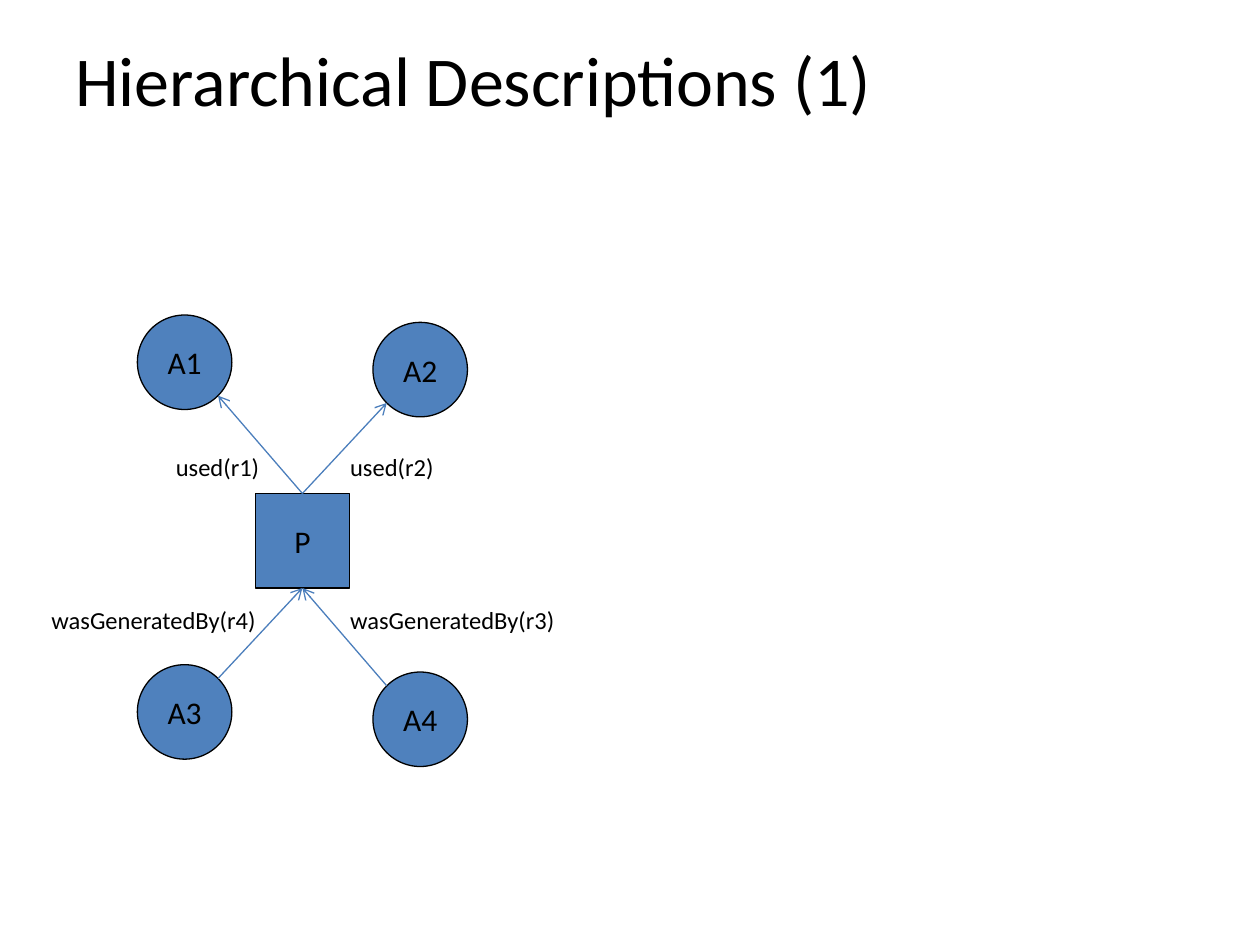
from math import sqrt

from lxml import etree
from pptx import Presentation
from pptx.dml.color import RGBColor
from pptx.enum import shapes, text
from pptx.oxml.ns import qn
from pptx.util import Pt

TITLE = "Hierarchical Descriptions (1)"
FONT = "Calibri"
COLORS = {"node": "4F81BD", "outline": "000000", "text": "000000", "arrow": "4B7EBC"}

NODE_SIZE = 54
PROCESS_CENTER = (172.8, 309)
ARTIFACT_OFFSET = 67.3
# name, side of the process (-1 left, 1 right), top, whether the process uses it
ARTIFACTS = [
    ("A1", -1, 180, True),
    ("A2", 1, 184.2, True),
    ("A3", -1, 379.8, False),
    ("A4", 1, 384, False),
]
# wording, left, top, width
LABELS = [
    ("used(r2)", 193, 254.7, 62.6),
    ("used(r1)", 93.4, 254.7, 62.6),
    ("wasGeneratedBy(r3)", 193, 342.2, 132.5),
    ("wasGeneratedBy(r4)", 22.3, 342.2, 132.5),
]
LABEL_HEIGHT = 24.2


def color(name):
    return RGBColor.from_string(COLORS[name])


def write(shape, wording, size, alignment, anchor, wrap=False):
    frame = shape.text_frame
    frame.word_wrap = wrap
    frame.vertical_anchor = anchor
    paragraph = frame.paragraphs[0]
    paragraph.text = wording
    paragraph.alignment = alignment
    paragraph.font.name = FONT
    paragraph.font.size = Pt(size)
    paragraph.font.color.rgb = color("text")


def add_text(slide, wording, left, top, width, height, size, anchor, wrap=False):
    box = slide.shapes.add_textbox(Pt(left), Pt(top), Pt(width), Pt(height))
    write(box, wording, size, text.PP_ALIGN.LEFT, anchor, wrap)
    return box


def add_node(slide, kind, name, center_x, top):
    node = slide.shapes.add_shape(
        kind, Pt(center_x - NODE_SIZE / 2), Pt(top), Pt(NODE_SIZE), Pt(NODE_SIZE))
    node.shadow.inherit = False
    node.fill.solid()
    node.fill.fore_color.rgb = color("node")
    node.line.color.rgb = color("outline")
    node.line.width = Pt(0.75)
    write(node, name, 18, text.PP_ALIGN.CENTER, text.MSO_ANCHOR.MIDDLE)
    return node


def add_arrow(slide, process, artifact_point, used):
    """Point from the process to a used artifact, or from a generated one to it."""
    x, y = (Pt(value) for value in artifact_point)
    arrow = slide.shapes.add_connector(shapes.MSO_CONNECTOR.STRAIGHT, x, y, x, y)
    if used:
        arrow.begin_connect(process, 0)
    else:
        arrow.end_connect(process, 2)
    arrow.line.color.rgb = color("arrow")
    arrow.line.width = Pt(0.75)
    etree.SubElement(arrow.line._get_or_add_ln(), qn("a:tailEnd"), type="arrow")
    etree.SubElement(arrow._element.spPr, qn("a:effectLst"))


def main():
    presentation = Presentation()
    presentation.slide_width, presentation.slide_height = Pt(720), Pt(540)
    slide = presentation.slides.add_slide(presentation.slide_layouts[6])

    add_text(slide, TITLE, 36, 0, 534, 90, 40, text.MSO_ANCHOR.MIDDLE, wrap=True)

    center_x, center_y = PROCESS_CENTER
    process = add_node(slide, shapes.MSO_SHAPE.RECTANGLE, "P",
                       center_x, center_y - NODE_SIZE / 2)
    diagonal = NODE_SIZE / 2 / sqrt(2)
    for name, side, top, used in ARTIFACTS:
        x = center_x + side * ARTIFACT_OFFSET
        add_node(slide, shapes.MSO_SHAPE.OVAL, name, x, top)
        toward_process = diagonal if used else -diagonal
        point = (x - side * diagonal, top + NODE_SIZE / 2 + toward_process)
        add_arrow(slide, process, point, used)

    for wording, left, top, width in LABELS:
        label = add_text(slide, wording, left, top, width, LABEL_HEIGHT, 14,
                         text.MSO_ANCHOR.TOP)
        label.text_frame.auto_size = text.MSO_AUTO_SIZE.SHAPE_TO_FIT_TEXT

    presentation.save("out.pptx")


if __name__ == "__main__":
    main()
